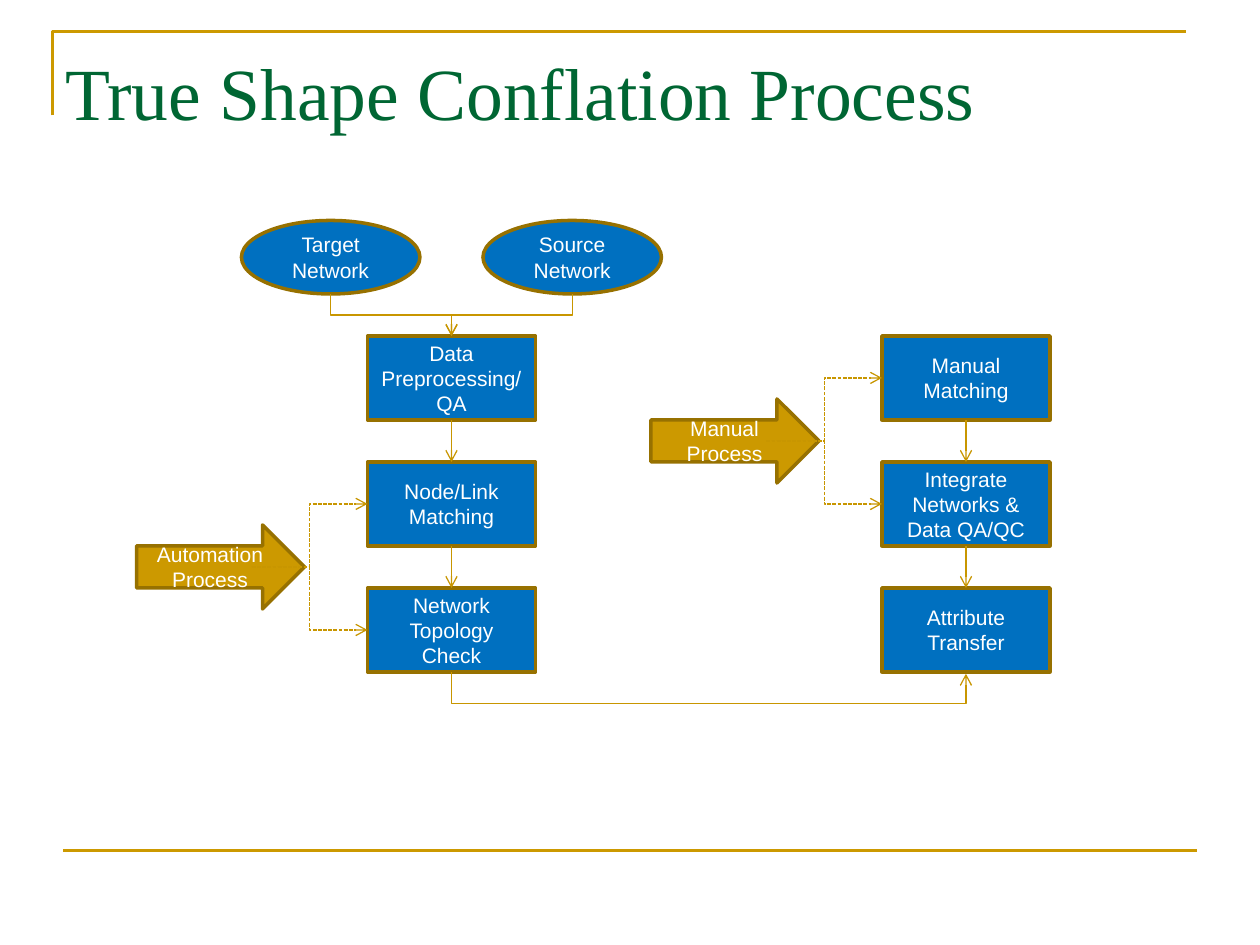
from lxml import etree
from pptx import Presentation
from pptx.dml.color import RGBColor
from pptx.enum import dml, shapes, text
from pptx.oxml import ns
from pptx.util import Pt

SHAPE = shapes.MSO_SHAPE
BLUE, GOLD, BROWN = "0070C0", "CC9900", "977100"
FLOW, GREEN, WHITE = "C89600", "006633", "FFFFFF"
STEP_W, STEP_H, STEP_PITCH = 96, 48, 72


def rgb(value):
    return RGBColor.from_string(value)


def set_line(shape, color, width):
    shape.line.color.rgb = rgb(color)
    shape.line.width = Pt(width)


def add_node(slide, kind, label, left, top, width, height, fill=BLUE):
    node = slide.shapes.add_shape(kind, Pt(left), Pt(top), Pt(width), Pt(height))
    node.shadow.inherit = False
    node.fill.solid()
    node.fill.fore_color.rgb = rgb(fill)
    set_line(node, BROWN, 2)
    frame = node.text_frame
    frame.word_wrap = True
    frame.vertical_anchor = text.MSO_ANCHOR.MIDDLE
    frame.text = label
    paragraph = frame.paragraphs[0]
    paragraph.alignment = text.PP_ALIGN.CENTER
    font = paragraph.runs[0].font
    font.name, font.size, font.color.rgb = "Arial", Pt(12), rgb(WHITE)
    return node


def add_link(slide, kind, start, end, color=FLOW, width=0.75, arrow=True, dashed=False):
    link = slide.shapes.add_connector(kind, *(Pt(v) for v in (*start, *end)))
    set_line(link, color, width)
    if dashed:
        link.line.dash_style = dml.MSO_LINE.SQUARE_DOT
    if arrow:
        etree.SubElement(link.line._get_or_add_ln(), ns.qn("a:tailEnd"), type="arrow")
    etree.SubElement(link._element.spPr, ns.qn("a:effectLst"))
    return link


def add_vertical_elbow(slide, start, end, bend=0.5):
    """Elbow that leaves and arrives vertically: a level one turned by a quarter."""
    (x1, y1), (x2, y2) = start, end
    mid_x, mid_y = (x1 + x2) / 2, (y1 + y2) / 2
    half_w, half_h = (y2 - y1) / 2, abs(x2 - x1) / 2
    rightward = x2 > x1
    side = half_w if rightward else -half_w
    link = add_link(slide, shapes.MSO_CONNECTOR.ELBOW,
                    (mid_x + side, mid_y - half_h), (mid_x - side, mid_y + half_h))
    properties = link._element.spPr
    properties.find(ns.qn("a:xfrm")).set("rot", str((270 if rightward else 90) * 60000))
    guides = properties.find(ns.qn("a:prstGeom")).get_or_add_avLst()
    etree.SubElement(guides, ns.qn("a:gd"), name="adj1", fmla=f"val {round(bend * 100000)}")


def add_title(slide, left, top, width, height):
    # Corner rule above the title and rule at the foot
    builder = slide.shapes.build_freeform(Pt(left), Pt(top + 48), scale=1.0)
    builder.add_line_segments([(Pt(left), Pt(top)), (Pt(left + width), Pt(top))], close=False)
    corner = builder.convert_to_shape()
    corner.shadow.inherit = False
    corner.fill.background()
    set_line(corner, GOLD, 1.5)
    add_link(slide, shapes.MSO_CONNECTOR.STRAIGHT, (36, 486), (684, 486), GOLD, 1.5, arrow=False)

    title = slide.shapes.title
    title.left, title.top, title.width, title.height = map(Pt, (left, top, width, height))
    frame = title.text_frame
    frame.text = "True Shape Conflation Process"
    frame.vertical_anchor = text.MSO_ANCHOR.TOP
    frame.margin_top = Pt(9)
    paragraph = frame.paragraphs[0]
    paragraph.alignment = text.PP_ALIGN.LEFT
    font = paragraph.runs[0].font
    font.name, font.size, font.color.rgb = "Times New Roman", Pt(42), rgb(GREEN)


def add_steps(slide, left, top, labels):
    """Column of steps, each joined to the next one."""
    steps = [add_node(slide, SHAPE.RECTANGLE, label, left, top + i * STEP_PITCH, STEP_W, STEP_H)
             for i, label in enumerate(labels)]
    for upper, lower in zip(steps, steps[1:]):
        link = add_link(slide, shapes.MSO_CONNECTOR.STRAIGHT, (0, 0), (0, 0))
        link.begin_connect(upper, 2)
        link.end_connect(lower, 0)


def add_networks(slide, left, top, target):
    """Two input networks that feed the first step."""
    width, height, pitch = 102, 42, 138
    for i, label in enumerate(("Target Network", "Source Network")):
        x = left + i * pitch
        add_node(slide, SHAPE.OVAL, label, x, top, width, height)
        add_vertical_elbow(slide, (x + width / 2, top + height), target)


def add_process(slide, label, left, top):
    """Block arrow with dashed branches to the steps above and below it."""
    add_node(slide, SHAPE.RIGHT_ARROW, label, left, top, STEP_W, STEP_H, GOLD)
    x, y = left + 66, top + STEP_H / 2
    for offset in (-STEP_PITCH / 2, STEP_PITCH / 2):
        add_link(slide, shapes.MSO_CONNECTOR.ELBOW, (x, y), (x + 66, y + offset), dashed=True)


def main():
    deck = Presentation()
    deck.slide_width, deck.slide_height = Pt(720), Pt(540)
    slide = deck.slides.add_slide(deck.slide_layouts[5])
    add_title(slide, 30, 18, 648, 90)

    # Automated and manual columns
    auto_left, manual_left, top = 210, 504, 192
    add_steps(slide, auto_left, top,
              ("Data Preprocessing/QA", "Node/Link Matching", "Network Topology Check"))
    add_steps(slide, manual_left, top,
              ("Manual Matching", "Integrate Networks & Data QA/QC", "Attribute Transfer"))
    add_networks(slide, 138, 126, (auto_left + STEP_W / 2, top))
    add_process(slide, "Automation Process", 78, 300)
    add_process(slide, "Manual Process", 372, 228)

    # Hand-over from the automated to the manual column
    bottom = top + 2 * STEP_PITCH + STEP_H
    add_vertical_elbow(slide, (auto_left + STEP_W / 2, bottom),
                       (manual_left + STEP_W / 2, bottom + 1), bend=18)
    deck.save("out.pptx")


if __name__ == "__main__":
    main()
